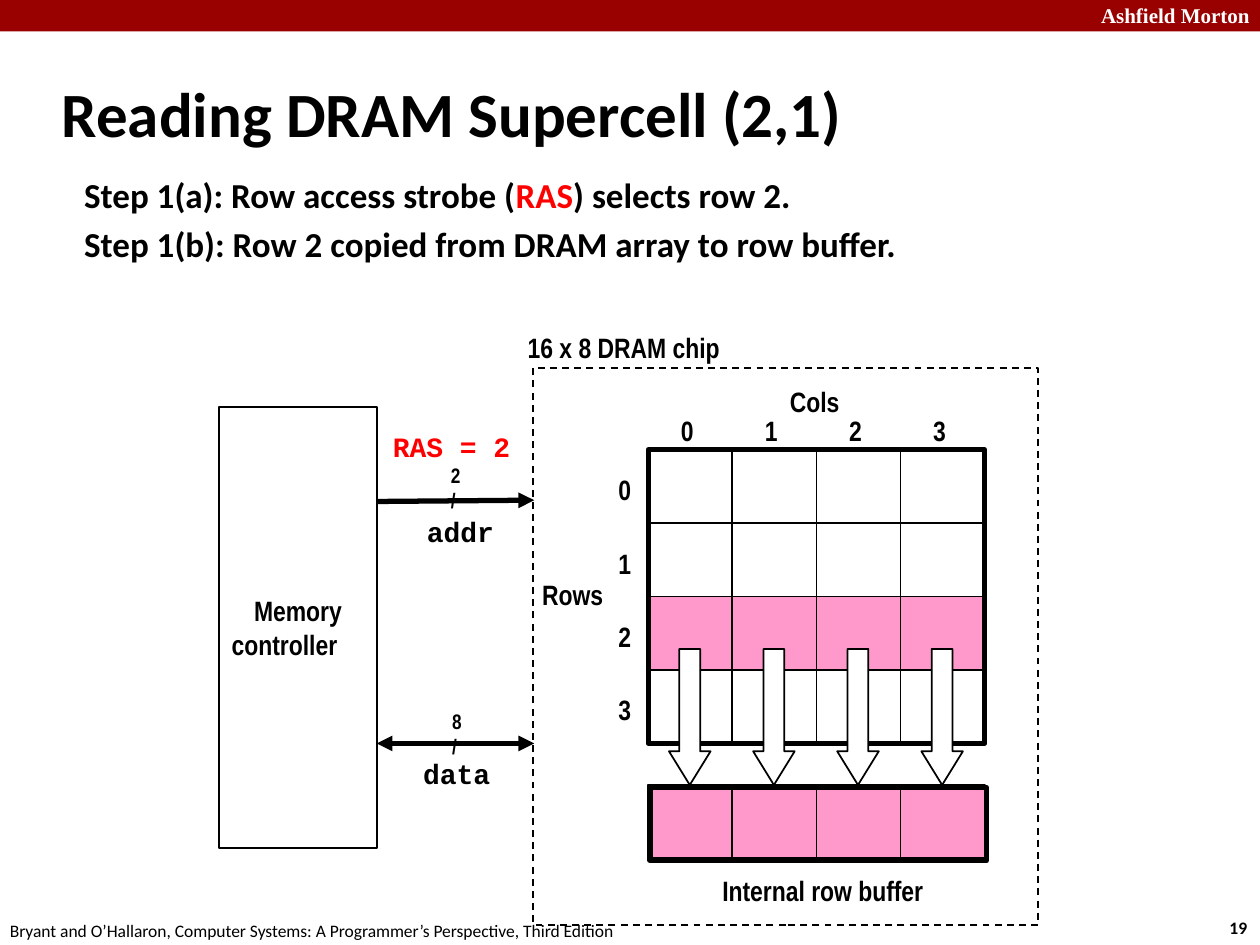
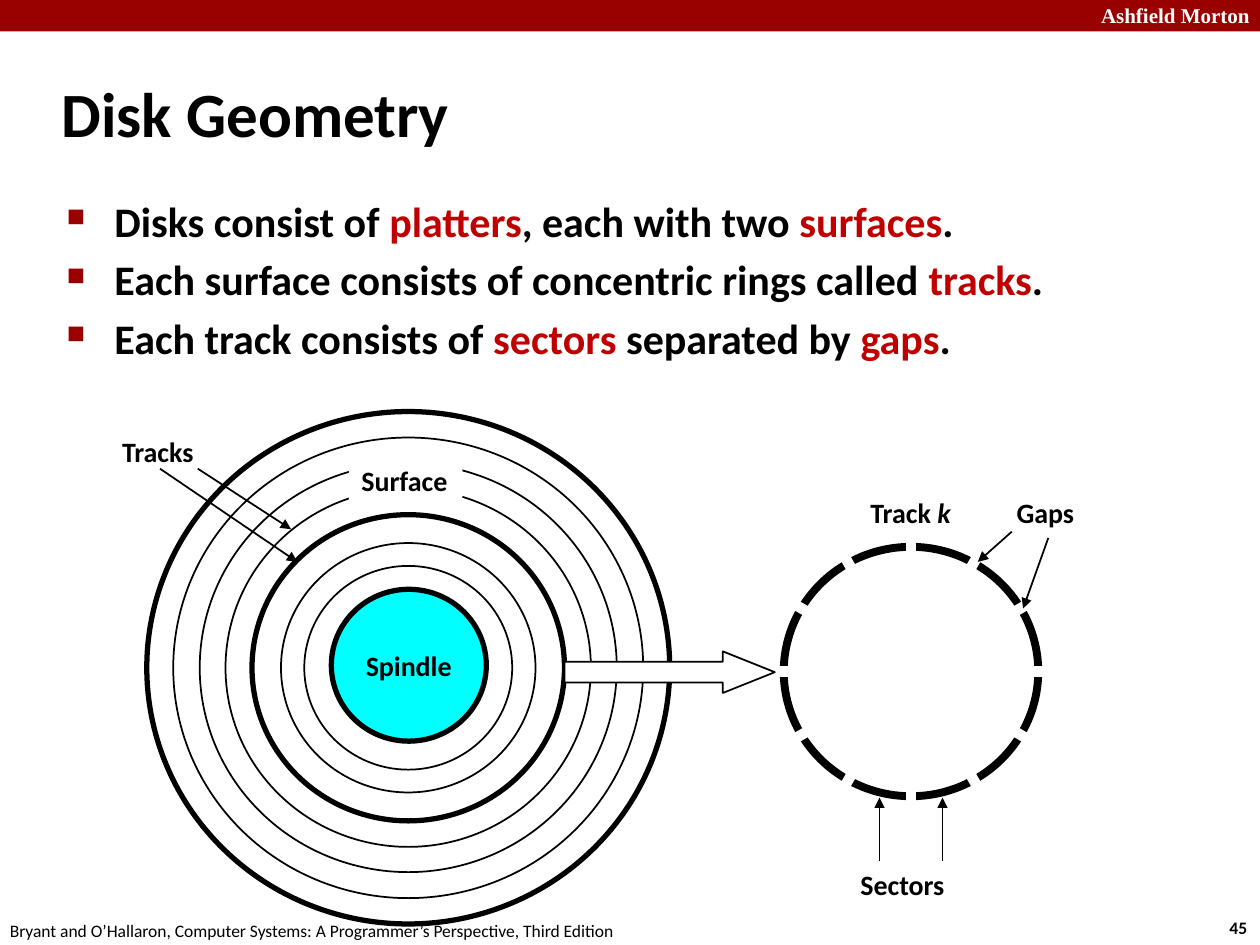
from dataclasses import dataclass
from math import cos, radians, sin
from typing import NamedTuple

from lxml import etree
from pptx import Presentation
from pptx.dml.color import RGBColor
from pptx.enum.dml import MSO_LINE
from pptx.enum.shapes import MSO_CONNECTOR, MSO_SHAPE
from pptx.enum.text import MSO_ANCHOR, MSO_AUTO_SIZE, PP_ALIGN
from pptx.oxml.ns import qn
from pptx.util import Inches, Pt

RECT, OVAL = MSO_SHAPE.RECTANGLE, MSO_SHAPE.OVAL
DOWN, RIGHT = MSO_SHAPE.DOWN_ARROW, MSO_SHAPE.RIGHT_ARROW
STRAIGHT = MSO_CONNECTOR.STRAIGHT
DASH = MSO_LINE.DASH
LEFT, CENTER = PP_ALIGN.LEFT, PP_ALIGN.CENTER
TOP, MIDDLE = MSO_ANCHOR.TOP, MSO_ANCHOR.MIDDLE
FIXED, GROW = MSO_AUTO_SIZE.NONE, MSO_AUTO_SIZE.SHAPE_TO_FIT_TEXT

SLIDE_WIDTH, SLIDE_HEIGHT = Inches(10), Inches(7.5)
COLUMN, ROW = SLIDE_WIDTH / 100, SLIDE_HEIGHT / 75
TITLE_ONLY = 5
COLORS = {
    "band": "990000",
    "ink": "000000",
    "paper": "FFFFFF",
    "selected": "FF99CC",
    "strobe": "FF0000",
    "term": "C00000",
    "spindle": "00FFFF",
}
SANS, NARROW, MONO, SERIF = "Calibri", "Arial Narrow", "Courier New", "Times New Roman"
CREDIT = "Bryant and O’Hallaron, Computer Systems: A Programmer’s Perspective, Third Edition"


class Area(NamedTuple):
    left: float
    top: float
    width: float
    height: float


class Run(NamedTuple):
    text: str
    color: str = "ink"
    italic: bool = False


@dataclass(frozen=True)
class Style:
    font: str = SANS
    size: float = 16
    bold: bool = True
    align: PP_ALIGN = LEFT


@dataclass(frozen=True)
class Label:
    area: Area
    lines: list
    style: Style = Style()


@dataclass(frozen=True)
class Arrow:
    start: tuple
    end: tuple
    width: float = 1
    color: str = "ink"
    tips: tuple = ("tailEnd",)


DIAGRAM = Style(NARROW)
DIAGRAM_CENTERED = Style(NARROW, align=CENTER)
CODE = Style(MONO)
BUS_WIDTH = Style(NARROW, 12)
TITLE = Style(size=36)


def rgb(color: str) -> RGBColor:
    return RGBColor.from_string(COLORS[color])


def emu(area: Area) -> tuple:
    return (round(area.left * COLUMN), round(area.top * ROW),
            round(area.width * COLUMN), round(area.height * ROW))


def apply(target, values: dict) -> None:
    for attribute, value in values.items():
        setattr(target, attribute, value)


def write(frame, lines: list, style: Style) -> None:
    for index, line in enumerate(lines):
        paragraph = frame.paragraphs[0] if index == 0 else frame.add_paragraph()
        paragraph.alignment = style.align
        for part in [Run(line)] if isinstance(line, str) else line:
            run = paragraph.add_run()
            run.text = part.text
            apply(run.font, {"name": style.font, "size": Pt(style.size),
                             "bold": style.bold, "italic": part.italic})
            run.font.color.rgb = rgb(part.color)


def add_label(slide, label: Label) -> None:
    frame = slide.shapes.add_textbox(*emu(label.area)).text_frame
    apply(frame, {"word_wrap": False, "auto_size": GROW, "vertical_anchor": MIDDLE})
    write(frame, label.lines, label.style)


def add_figure(slide, kind, area: Area, fill: str = "", line: float = 1):
    figure = slide.shapes.add_shape(kind, *emu(area))
    figure.shadow.inherit = False
    if fill:
        figure.fill.solid()
        figure.fill.fore_color.rgb = rgb(fill)
    else:
        figure.fill.background()
    if line:
        figure.line.color.rgb = rgb("ink")
        figure.line.width = Pt(line)
    else:
        figure.line.fill.background()
    return figure


def add_block_arrow(slide, kind, area: Area, head: float) -> None:
    block = add_figure(slide, kind, area, "paper")
    block.adjustments[0], block.adjustments[1] = 0.5, head


def add_arrow(slide, arrow: Arrow) -> None:
    (x1, y1), (x2, y2) = arrow.start, arrow.end
    connector = slide.shapes.add_connector(
        STRAIGHT, round(x1 * COLUMN), round(y1 * ROW), round(x2 * COLUMN), round(y2 * ROW))
    connector.line.color.rgb = rgb(arrow.color)
    connector.line.width = Pt(arrow.width)
    properties = connector._element.spPr
    for tip in arrow.tips:
        etree.SubElement(properties.find(qn("a:ln")), qn(f"a:{tip}"), type="triangle")
    etree.SubElement(properties, qn("a:effectLst"))


def add_body(slide, area: Area, lines: list, size: float, bulleted: bool) -> None:
    frame = slide.shapes.add_textbox(*emu(area)).text_frame
    apply(frame, {"word_wrap": True, "auto_size": FIXED, "vertical_anchor": TOP})
    write(frame, lines, Style(size=size))
    for paragraph in frame.paragraphs:
        paragraph.space_before = Pt(size * 0.2)
        properties = paragraph._p.get_or_add_pPr()
        properties.set("marL", str(Inches(0.38)))
        properties.set("indent", str(-Inches(0.38)))
        if bulleted:
            color = etree.SubElement(properties, qn("a:buClr"))
            etree.SubElement(color, qn("a:srgbClr"), val=COLORS["band"])
            etree.SubElement(properties, qn("a:buSzPct"), val="60000")
            etree.SubElement(properties, qn("a:buChar"), char="■")


def start_slide(deck, title: str, number: int):
    slide = deck.slides.add_slide(deck.slide_layouts[TITLE_ONLY])
    heading = slide.shapes.title
    left, top, width, height = emu(Area(3.9, 4.8, 83, 8.3))
    apply(heading, {"left": left, "top": top, "width": width, "height": height})
    apply(heading.text_frame, {"vertical_anchor": MIDDLE, "auto_size": FIXED})
    write(heading.text_frame, [title], TITLE)
    add_figure(slide, RECT, Area(0, 0, 100, 2.5), "band", 0)
    for label in (
        Label(Area(86.4, -0.3, 14.3, 3), [[Run("Ashfield Morton", "paper")]], Style(SERIF, 12)),
        Label(Area(96.6, 72.3, 3.7, 2.7), [str(number)], Style(size=10)),
        Label(Area(-0.2, 72.5, 50.8, 2.7), [CREDIT], Style(size=10, bold=False)),
    ):
        add_label(slide, label)
    return slide


def build_supercell(deck) -> None:
    slide = start_slide(deck, "Reading DRAM Supercell (2,1)", 19)
    add_body(slide, Area(5.7, 13.3, 89.3, 10.8), [
        [Run("Step 1(a): Row access strobe ("), Run("RAS", "strobe"), Run(") selects row 2.")],
        "Step 1(b): Row 2 copied from DRAM array to row buffer.",
    ], 20, False)

    count, selected_row = 4, 2
    array = Area(51.45, 35.7, 26.7, 23.3)
    cell_width, cell_height = array.width / count, array.height / count
    buffer_top = 62.3

    add_figure(slide, RECT, Area(51.6, 62.5, 26.7, 5.8), "selected", 3)
    add_figure(slide, RECT, Area(42.3, 29.2, 40.1, 44.2)).line.dash_style = DASH
    for row in range(count):
        fill = "selected" if row == selected_row else "paper"
        for column in range(count):
            add_figure(slide, RECT, Area(array.left + column * cell_width,
                                         array.top + row * cell_height,
                                         cell_width, cell_height), fill)
    add_figure(slide, RECT, array, line=3)
    for index in range(count):
        cell_left = array.left + index * cell_width
        add_figure(slide, RECT, Area(cell_left, buffer_top, cell_width, cell_height))
        add_block_arrow(slide, DOWN, Area(cell_left + 1.65, 51.5, 3.3, 10.8), 0.81)
        add_label(slide, Label(Area(cell_left + 1.6, 32.3, 3.2, 3.7), [str(index)], DIAGRAM))
        add_label(slide, Label(Area(48.1, 37 + index * cell_height, 3.2, 3.7),
                               [str(index)], DIAGRAM))

    controller = add_figure(slide, RECT, Area(17.4, 32.3, 12.5, 35), "paper").text_frame
    apply(controller, {"word_wrap": True, "vertical_anchor": MIDDLE})
    write(controller, ["Memory", "controller"], DIAGRAM)
    controller.paragraphs[0].alignment = CENTER

    add_arrow(slide, Arrow((29.9, 39.8), (42.4, 39.7), 3))
    add_arrow(slide, Arrow((29.9, 59), (42.4, 59), 3, tips=("headEnd", "tailEnd")))
    for label in (
        Label(Area(61.7, 30, 6, 3.7), ["Cols"], DIAGRAM),
        Label(Area(42, 45.3, 6.9, 3.7), ["Rows"], DIAGRAM_CENTERED),
        Label(Area(56.2, 68.8, 18.2, 3.7), ["Internal row buffer"], DIAGRAM_CENTERED),
        Label(Area(40.9, 25.7, 20.7, 3.7), ["16 x 8 DRAM chip"], DIAGRAM),
        Label(Area(30.2, 33.6, 11.4, 3.7), [[Run("RAS = 2", "strobe")]], CODE),
        Label(Area(32.9, 40.3, 7.4, 3.7), ["addr"], CODE),
        Label(Area(32.6, 59.5, 7.4, 3.7), ["data"], CODE),
        Label(Area(34.8, 36.2, 2.9, 5), ["2", "/"], BUS_WIDTH),
        Label(Area(34.9, 55.7, 2.9, 5), ["8", "/"], BUS_WIDTH),
    ):
        add_label(slide, label)


def add_ring(slide, center: tuple, width: float, line: float, fill: str = ""):
    height = width * 0.98
    return add_figure(slide, OVAL, Area(center[0] - width / 2, center[1] - height / 2,
                                        width, height), fill, line)


def build_disk(deck) -> None:
    slide = start_slide(deck, "Disk Geometry", 45)
    add_body(slide, Area(4.3, 15, 86.4, 54.4), [
        [Run("Disks consist of "), Run("platters", "term"), Run(", each with two "),
         Run("surfaces", "term"), Run(".")],
        [Run("Each surface consists of concentric rings called "), Run("tracks", "term"),
         Run(".")],
        [Run("Each track consists of "), Run("sectors ", "term"), Run("separated by "),
         Run("gaps", "term"), Run(".")],
    ], 24, True)

    disk_center = (32.4, 53)
    for width, line in ((41.5, 3), (37.3, 1), (33.1, 1), (29, 1),
                        (24.8, 3), (20.2, 1), (16.5, 1)):
        add_ring(slide, disk_center, width, line)
    spindle = add_ring(slide, (32.45, 52.8), 12.3, 3, "spindle").text_frame
    apply(spindle, {"word_wrap": False, "vertical_anchor": MIDDLE})
    write(spindle, ["Spindle"], Style(align=CENTER))
    surface = Area(27.7, 36.3, 9, 3.7)
    add_figure(slide, RECT, surface, "paper", 0)

    track_center, spoke, gap_count = (72.3, 53.3), 11.7, 12
    add_ring(slide, track_center, 20.2, 4.5)
    for gap in range(gap_count):
        angle = radians(gap * 360 / gap_count)
        tip = (track_center[0] + spoke * cos(angle), track_center[1] + spoke * sin(angle))
        add_arrow(slide, Arrow(track_center, tip, 6, "paper", ()))

    add_block_arrow(slide, RIGHT, Area(44.8, 51.7, 16.7, 3.3), 1.25)
    for start, end in (
        ((12.7, 37.2), (23.6, 44.6)),
        ((15.7, 37.2), (23.1, 42)),
        ((69.8, 68.3), (69.8, 63.3)),
        ((74.8, 68.3), (74.8, 63.3)),
        ((80.3, 42.2), (77.6, 44.6)),
        ((83.2, 42.7), (81.2, 48.3)),
    ):
        add_arrow(slide, Arrow(start, end))
    for label in (
        Label(surface, ["Surface"]),
        Label(Area(8.7, 34, 7.9, 3.7), ["Tracks"]),
        Label(Area(68.1, 38.8, 8.7, 3.7), [[Run("Track "), Run("k", italic=True)]]),
        Label(Area(67.3, 68.3, 8.8, 3.7), ["Sectors"]),
        Label(Area(79.7, 38.8, 6.6, 3.7), ["Gaps"]),
    ):
        add_label(slide, label)


def main() -> None:
    deck = Presentation()
    apply(deck, {"slide_width": SLIDE_WIDTH, "slide_height": SLIDE_HEIGHT})
    build_supercell(deck)
    build_disk(deck)
    deck.save("out.pptx")


if __name__ == "__main__":
    main()
